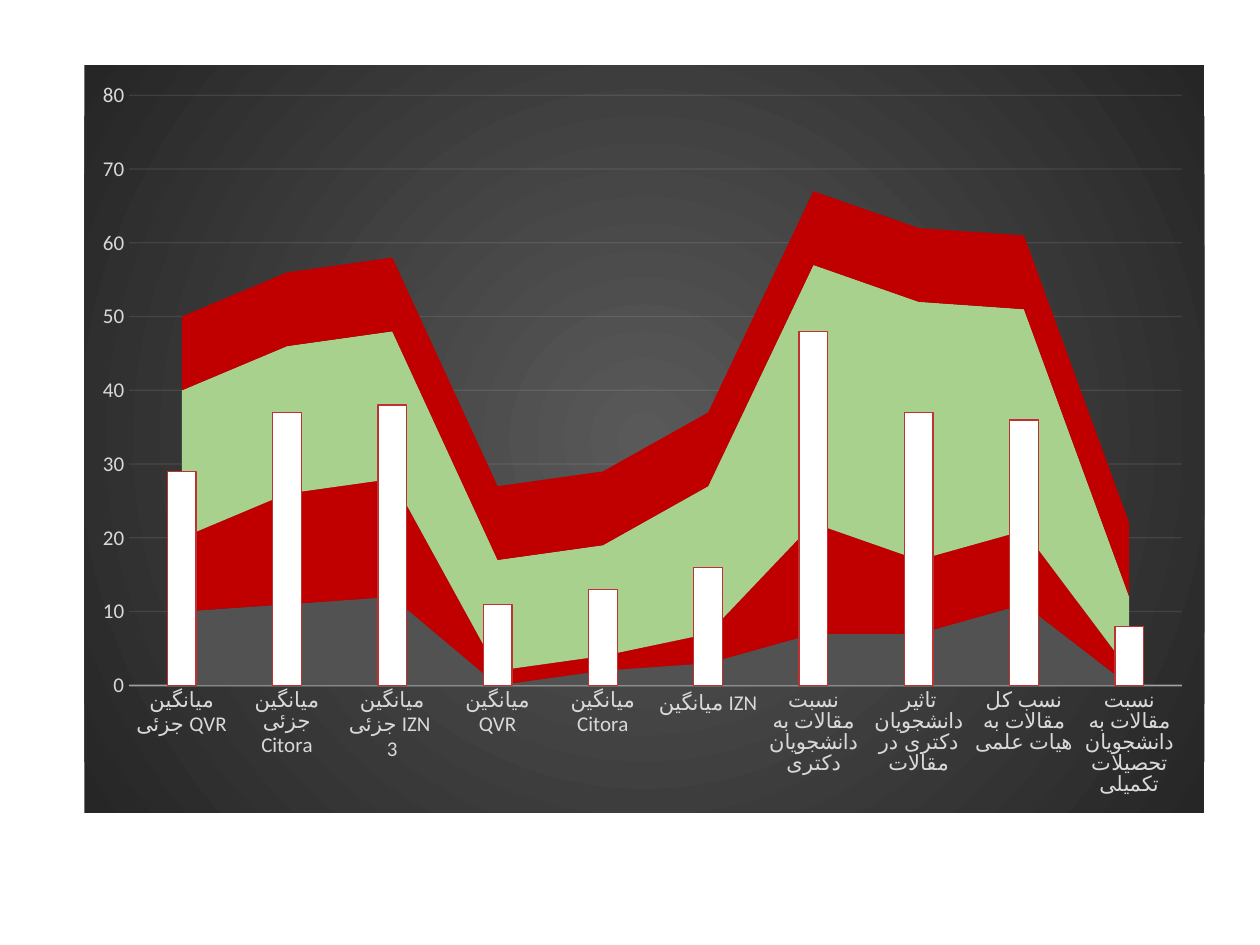
from lxml.etree import SubElement
from pptx import Presentation
from pptx.chart.data import CategoryChartData
from pptx.dml.color import RGBColor
from pptx.enum.chart import XL_CHART_TYPE as ChartType, XL_TICK_MARK as TickMark
from pptx.oxml import parse_xml
from pptx.oxml.ns import nsdecls, qn
from pptx.util import Cm, Pt

# Content
CATEGORIES = [
    "میانگین جزئی QVR", "میانگین جزئی Citora", "میانگین جزئی IZN  3",
    "میانگین QVR", "میانگین Citora", "میانگین IZN",
    "نسبت مقالات به دانشجویان دکتری", "تاثیر دانشجویان دکتری در مقالات",
    "نسب کل مقالات به هیات علمی", "نسبت مقالات به دانشجویان تحصیلات تکمیلی",
]
SERIES = [  # name, fill, values; the last one is drawn as columns
    ("Series 1", "525252", (10, 11, 12, 0, 2, 3, 7, 7, 11, 0)),
    ("Series 2", "C00000", (10, 15, 16, 2, 2, 4, 15, 10, 10, 2)),
    ("Series 3", "A9D18E", (20, 20, 20, 15, 15, 20, 35, 35, 30, 10)),
    ("Series 4", "C00000", (10,) * 10),
    ("Series 5", "FFFFFF", (29, 37, 38, 11, 13, 16, 48, 37, 36, 8)),
]
COLUMN_LINE, LABEL, RULE = "BE3232", "D9D9D9", "F2F2F2"
GRADIENT = [(0, "595959"), (100, "262626")]
PLOT_LAYOUT = {"x": 0.04, "y": 0.04, "w": 0.94, "h": 0.79}


def color(value):
    return RGBColor.from_string(value)


def style_line(line, value, width):
    line.color.rgb = color(value)
    line.width = Pt(width)


def set_opacity(element, query, percent):
    for node in element.xpath(query):
        SubElement(node, qn("a:alpha")).set("val", str(percent * 1000))


def style_axis(axis):
    axis.major_tick_mark = axis.minor_tick_mark = TickMark.NONE
    font = axis.tick_labels.font
    font.size, font.name = Pt(12), "Calibri"
    font.color.rgb = color(LABEL)


def move_last_series_to_columns(area):
    """Put the last area series in a column plot on the same axes."""
    columns = parse_xml(
        f'<c:barChart {nsdecls("c")}><c:barDir val="col"/>'
        '<c:grouping val="clustered"/><c:varyColors val="0"/>'
        '<c:gapWidth val="267"/></c:barChart>')
    series = area.findall(qn("c:ser"))[-1]
    columns.insert(3, series)
    for axis_id in area.findall(qn("c:axId")):
        SubElement(columns, qn("c:axId")).set("val", axis_id.get("val"))
    area.addnext(columns)


def set_plot_layout(plot_area):
    for old in plot_area.findall(qn("c:layout")):
        plot_area.remove(old)
    modes = "".join(f'<c:{side}Mode val="edge"/>' for side in "xy")
    sizes = "".join(f'<c:{key} val="{value}"/>' for key, value in PLOT_LAYOUT.items())
    plot_area.insert(0, parse_xml(
        f'<c:layout {nsdecls("c")}><c:manualLayout><c:layoutTarget val="inner"/>'
        f'{modes}{sizes}</c:manualLayout></c:layout>'))


def set_background(chart_space):
    stops = "".join(f'<a:gs pos="{position * 1000}"><a:srgbClr val="{value}"/></a:gs>'
                    for position, value in GRADIENT)
    chart_space.find(qn("c:chart")).addnext(parse_xml(
        f'<c:spPr {nsdecls("c", "a")}><a:gradFill><a:gsLst>{stops}</a:gsLst>'
        '<a:path path="circle"><a:fillToRect l="50000" t="50000" r="50000" b="50000"/>'
        '</a:path></a:gradFill><a:ln><a:noFill/></a:ln></c:spPr>'))


presentation = Presentation()
presentation.slide_width, presentation.slide_height = Cm(25.4), Cm(19.05)
slide = presentation.slides.add_slide(presentation.slide_layouts[6])

# Chart
data = CategoryChartData()
data.categories = CATEGORIES
for name, _, values in SERIES:
    data.add_series(name, values)
chart = slide.shapes.add_chart(ChartType.AREA_STACKED, Cm(1.7), Cm(1.32),
                               Cm(22.58), Cm(15.06), data).chart
chart.has_legend = chart.has_title = False
chart.font.size, chart.font.name = Pt(10), "Calibri"

# Series colours
plot = chart.plots[0]
plot.vary_by_categories = False
for series, (_, fill, _) in zip(plot.series, SERIES):
    series.format.fill.solid()
    series.format.fill.fore_color.rgb = color(fill)
    series.format.line.fill.background()
style_line(series.format.line, COLUMN_LINE, 0.75)

# Axes
category_axis, value_axis = chart.category_axis, chart.value_axis
for axis in (category_axis, value_axis):
    style_axis(axis)
category_axis.has_major_gridlines = False
style_line(category_axis.format.line, RULE, 1)
value_axis.minimum_scale, value_axis.maximum_scale, value_axis.major_unit = 0, 80, 10
value_axis.format.line.fill.background()
style_line(value_axis.major_gridlines.format.line, RULE, 0.75)

# Column plot, layout, transparency and background
chart_space = chart._chartSpace
plot_area = chart_space.xpath("c:chart/c:plotArea")[0]
move_last_series_to_columns(plot_area.find(qn("c:areaChart")))
set_plot_layout(plot_area)
set_opacity(plot_area, "c:catAx/c:spPr//a:srgbClr | c:dateAx/c:spPr//a:srgbClr", 54)
set_opacity(plot_area, "c:valAx/c:majorGridlines//a:srgbClr", 10)
for crossing in plot_area.xpath("c:valAx/c:crossBetween"):
    crossing.set("val", "between")
set_background(chart_space)

presentation.save("out.pptx")
